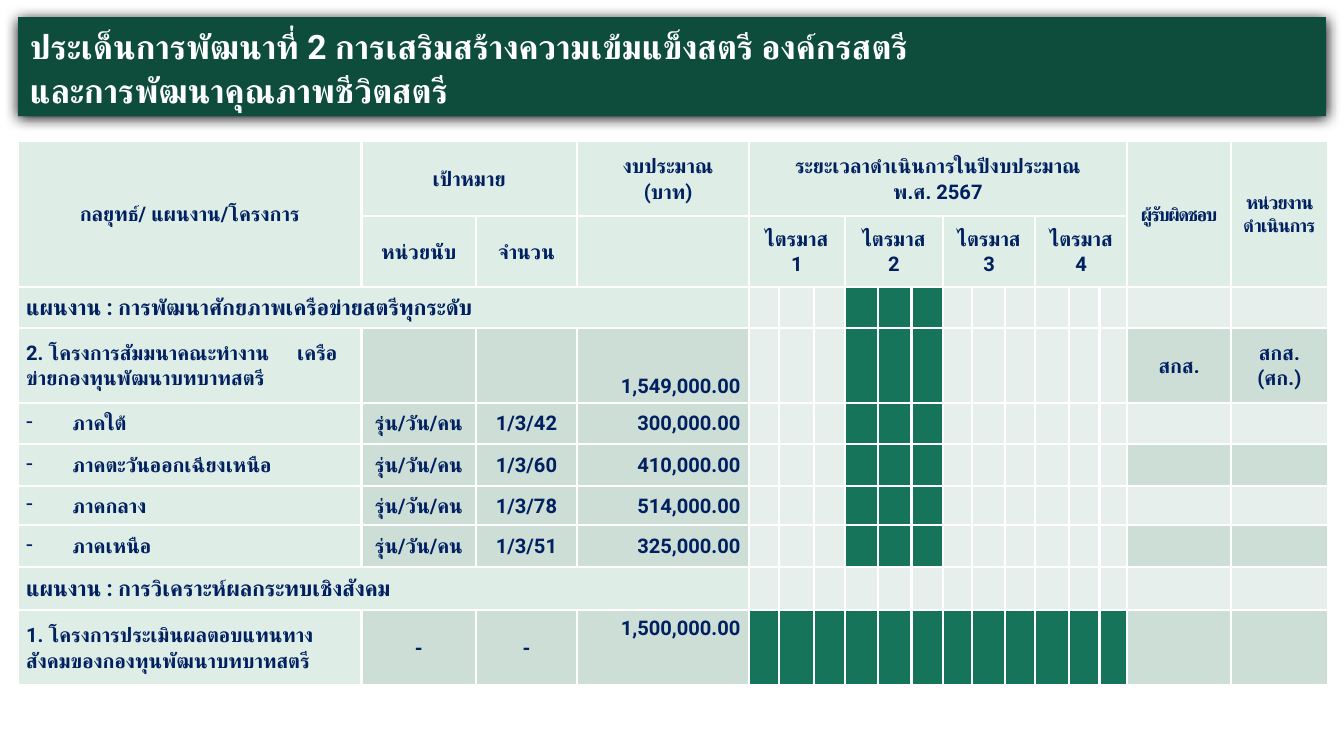
from lxml.etree import SubElement
from pptx import Presentation
from pptx.dml.color import RGBColor
from pptx.enum.shapes import MSO_SHAPE
from pptx.enum.text import MSO_ANCHOR, PP_ALIGN
from pptx.oxml import parse_xml
from pptx.oxml.ns import nsdecls, qn
from pptx.util import Cm, Pt

COLORS = {"banner": "0E4D3C", "white": "FFFFFF", "navy": "002060", "mint": "ADD3C0",
          "pale": "E7EFEC", "shade": "CDDED6", "active": "16745A", "shadow": "000000"}
FONT = "Roboto"

COLUMN_WIDTHS = [7.21, 2.41, 2.11, 3.61, 0.64, 0.74, 0.64, 0.69, 0.71, 0.66,
                 0.61, 0.69, 0.64, 0.71, 0.64, 0.58, 2.18, 2.03]
ROW_HEIGHTS = [1.57, 1.49, 0.86, 1.57, 0.86, 0.89, 0.81, 0.89, 0.91, 1.57]
FIRST_MONTH, LAST_MONTH = 4, 15
SECTION_ROWS = {2: "แผนงาน : การพัฒนาศักยภาพเครือข่ายสตรีทุกระดับ",
                8: "แผนงาน : การวิเคราะห์ผลกระทบเชิงสังคม"}
REGIONS = [("ภาคใต้", "1/3/42", "300,000.00"),
           ("ภาคตะวันออกเฉียงเหนือ", "1/3/60", "410,000.00"),
           ("ภาคกลาง", "1/3/78", "514,000.00"),
           ("ภาคเหนือ", "1/3/51", "325,000.00")]


def write_text(frame, text, size=12, color="navy", align=PP_ALIGN.LEFT, spacing=0,
               bullet=None, hanging=0, tab=None):
    """Each line of text becomes a paragraph; a vertical tab is a line break."""
    frame.word_wrap = True
    for index, line in enumerate(text.split("\n")):
        paragraph = frame.paragraphs[0] if index == 0 else frame.add_paragraph()
        paragraph.text = line
        properties = paragraph._p.get_or_add_pPr()
        if bullet:
            properties.set("marL", str(Cm(hanging)))
            properties.set("indent", str(-Cm(hanging)))
            SubElement(properties, qn("a:buChar"), char=bullet)
        if tab:
            tabs = SubElement(properties, qn("a:tabLst"))
            SubElement(tabs, qn("a:tab"), pos=str(Cm(tab)), algn="l")
        paragraph.alignment = align
        paragraph.line_spacing = 1.07
        for run in paragraph.runs:
            run.font.size = Pt(size)
            run.font.bold = True
            run.font.name = FONT
            run.font.color.rgb = RGBColor.from_string(COLORS[color])
            run_properties = run._r.get_or_add_rPr()
            SubElement(run_properties, qn("a:cs"), typeface=FONT)
            if spacing:
                run_properties.set("spc", str(round(spacing * 100)))


def add_banner(slide, left, top, width, height):
    shape = slide.shapes.add_shape(MSO_SHAPE.RECTANGLE, Cm(left), Cm(top), Cm(width), Cm(height))
    shape.fill.solid()
    shape.fill.fore_color.rgb = RGBColor.from_string(COLORS["banner"])
    shape.line.fill.background()
    shape._element.spPr.append(parse_xml(
        f'<a:effectLst {nsdecls("a")}><a:outerShdw blurRad="{Pt(8.5)}" dist="{Pt(1)}" '
        f'dir="5400000" algn="t" rotWithShape="0"><a:srgbClr val="{COLORS["shadow"]}"/>'
        '</a:outerShdw></a:effectLst>'))
    shape.text_frame.vertical_anchor = MSO_ANCHOR.MIDDLE
    write_text(shape.text_frame, "ประเด็นการพัฒนาที่ 2 การเสริมสร้างความเข้มแข็งสตรี องค์กรสตรี"
               "\vและการพัฒนาคุณภาพชีวิตสตรี", size=20, color="white")


def cell_color(row, column):
    """Headings and the first column are mint; months show the schedule."""
    if row < 2 or column == 0 or (row in SECTION_ROWS and column < FIRST_MONTH):
        return "mint"
    if FIRST_MONTH <= column <= LAST_MONTH:
        second_quarter = 7 <= column <= 9 and row <= 7
        return "active" if second_quarter or row == 9 else "pale"
    if column < FIRST_MONTH or row % 2:
        return "shade"
    return "pale"


def style_cell(cell, color):
    cell.vertical_anchor = MSO_ANCHOR.MIDDLE
    cell.margin_left = cell.margin_right = Cm(0.17)
    cell.margin_top = cell.margin_bottom = 0
    cell.fill.solid()
    cell.fill.fore_color.rgb = RGBColor.from_string(COLORS[color])
    properties = cell._tc.get_or_add_tcPr()
    if color == "mint":
        SubElement(properties.find(qn("a:solidFill"))[0], qn("a:alpha"), val="40000")
    for position, side in enumerate(("lnL", "lnR", "lnT", "lnB")):
        properties.insert(position, parse_xml(
            f'<a:{side} {nsdecls("a")} w="{Pt(1.5)}"><a:solidFill>'
            f'<a:srgbClr val="{COLORS["white"]}"/></a:solidFill></a:{side}>'))
    # Small size keeps empty cells from stretching their row
    cell.text_frame.paragraphs[0]._p.get_or_add_endParaRPr().set("sz", "1000")


def add_plan_table(slide, left, top, width, height):
    table = slide.shapes.add_table(len(ROW_HEIGHTS), len(COLUMN_WIDTHS), Cm(left), Cm(top),
                                   Cm(width), Cm(height)).table
    table.first_row = table.horz_banding = False
    for column, column_width in zip(table.columns, COLUMN_WIDTHS):
        column.width = Cm(column_width)
    for row, row_height in zip(table.rows, ROW_HEIGHTS):
        row.height = Cm(row_height)
    for row in range(len(ROW_HEIGHTS)):
        for column in range(len(COLUMN_WIDTHS)):
            style_cell(table.cell(row, column), cell_color(row, column))

    def fill_cell(row, column, text, rows=1, columns=1, align=PP_ALIGN.CENTER, **style):
        cell = table.cell(row, column)
        if rows > 1 or columns > 1:
            cell.merge(table.cell(row + rows - 1, column + columns - 1))
        write_text(cell.text_frame, text, align=align, **style)
        return cell

    # Headings
    fill_cell(0, 0, "กลยุทธ์/ แผนงาน/โครงการ", rows=2)
    fill_cell(0, 1, "เป้าหมาย", columns=2)
    budget = fill_cell(0, 3, "งบประมาณ\n(บาท)")
    budget.margin_left = Cm(0.4)
    fill_cell(0, FIRST_MONTH, "ระยะเวลาดำเนินการในปีงบประมาณ\nพ.ศ. 2567", columns=12)
    fill_cell(0, 16, "ผู้รับผิดชอบ", rows=2, size=11, spacing=-0.9)
    fill_cell(0, 17, "หน่วยงานดำเนินการ", rows=2, size=11, spacing=-0.6)
    fill_cell(1, 1, "หน่วยนับ")
    fill_cell(1, 2, "จำนวน")
    for quarter in range(4):
        fill_cell(1, FIRST_MONTH + 3 * quarter, f"ไตรมาส\n{quarter + 1}", columns=3)

    # Plan sections
    for row, title in SECTION_ROWS.items():
        fill_cell(row, 0, title, columns=4, align=PP_ALIGN.LEFT, size=13)

    # Seminar project and its regions
    fill_cell(3, 0, "2. โครงการสัมมนาคณะทำงาน\tเครือข่ายกองทุนพัฒนาบทบาทสตรี",
              align=PP_ALIGN.LEFT, tab=5.69)
    total = fill_cell(3, 3, "1,549,000.00", align=PP_ALIGN.RIGHT)
    total.vertical_anchor = MSO_ANCHOR.BOTTOM
    total.margin_bottom = Cm(0.1)
    fill_cell(3, 16, "สกส.")
    fill_cell(3, 17, "สกส.\n(ศก.)")
    for row, (region, count, amount) in enumerate(REGIONS, start=4):
        fill_cell(row, 0, region, align=PP_ALIGN.LEFT, bullet="-", hanging=0.97)
        fill_cell(row, 1, "รุ่น/วัน/คน")
        fill_cell(row, 2, count)
        fill_cell(row, 3, amount, align=PP_ALIGN.RIGHT)

    # Evaluation project
    fill_cell(9, 0, "1. โครงการประเมินผลตอบแทนทางสังคมของกองทุนพัฒนาบทบาทสตรี", align=PP_ALIGN.LEFT)
    for column in (1, 2):
        fill_cell(9, column, "-")
    evaluation = fill_cell(9, 3, "1,500,000.00", align=PP_ALIGN.RIGHT)
    evaluation.vertical_anchor = MSO_ANCHOR.TOP
    evaluation.margin_top = Cm(0.1)


def main():
    presentation = Presentation()
    presentation.slide_width = Cm(28.22)
    presentation.slide_height = Cm(15.88)
    slide = presentation.slides.add_slide(presentation.slide_layouts[6])
    add_banner(slide, 0.38, 0.36, 27.46, 2.08)
    add_plan_table(slide, 0.38, 2.97, sum(COLUMN_WIDTHS), sum(ROW_HEIGHTS))
    presentation.save("out.pptx")


if __name__ == "__main__":
    main()
